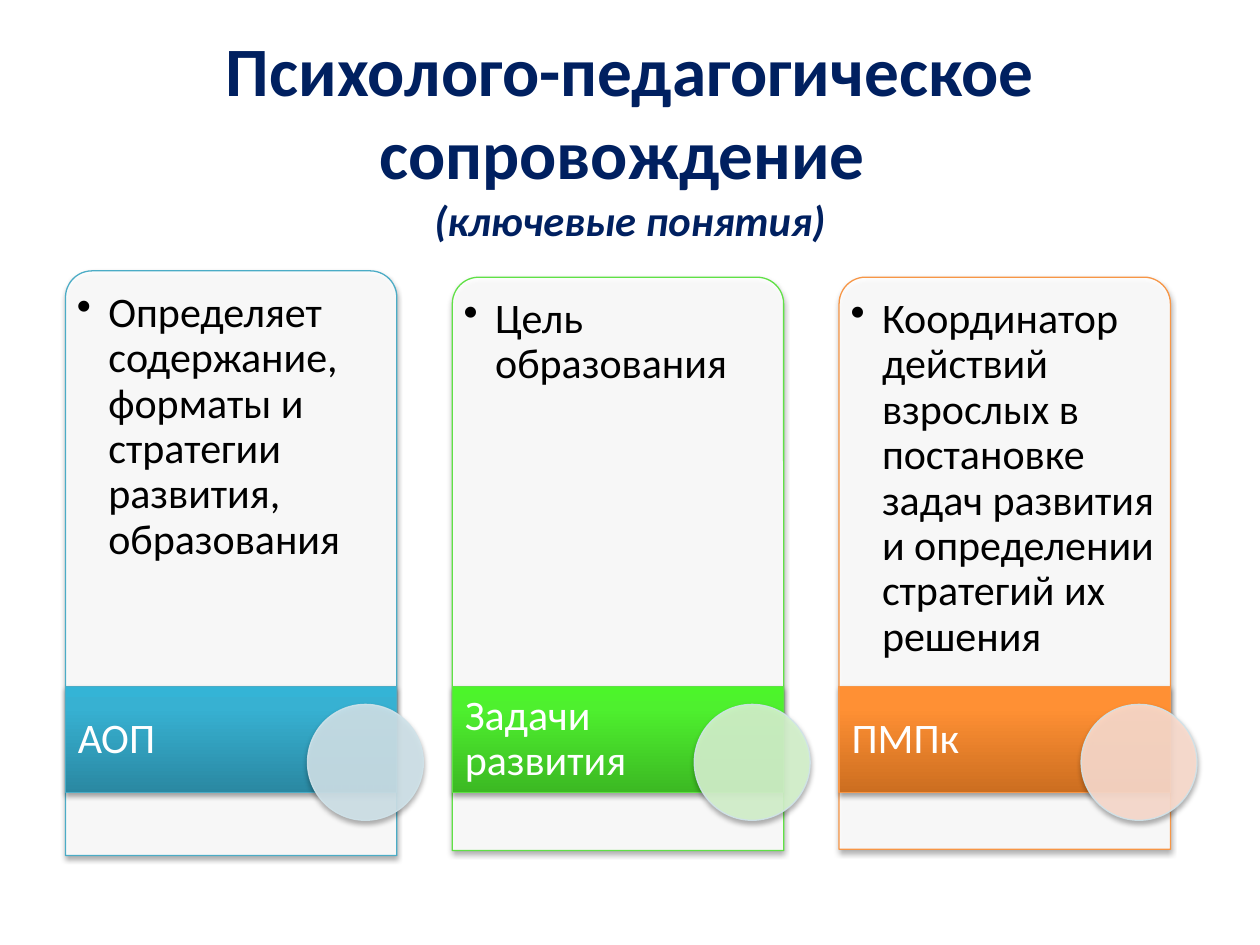
from dataclasses import dataclass
from typing import NamedTuple, Optional

from lxml.etree import SubElement
from pptx import Presentation
from pptx.dml.color import RGBColor
from pptx.enum.shapes import MSO_SHAPE as Preset
from pptx.enum.text import MSO_ANCHOR as Anchor, PP_ALIGN as Align
from pptx.oxml.ns import qn
from pptx.util import Emu, Pt

EMU_PER_PX = 9144  # 100 px to the inch


@dataclass(frozen=True)
class Theme:
    font: str = "Calibri"
    title: str = "002060"
    body: str = "000000"
    label: str = "FFFFFF"
    panel: str = "FFFFFF"
    circle_line: str = "D0E3EA"
    shadow: str = "000000"
    title_size: float = 39.6
    subtitle_size: float = 24.3
    text_size: float = 24
    line_width: float = 0.75


class Box(NamedTuple):
    left: int
    top: int
    width: int
    height: int


class Insets(NamedTuple):
    left: int
    top: int
    right: int
    bottom: int


class Column(NamedTuple):
    label: str
    body: str
    panel_top: int
    panel_height: int
    accent: str
    gradient: tuple[str, str, str]
    circle: str


THEME = Theme()
COLUMN_LEFT, COLUMN_PITCH, COLUMN_WIDTH = 52, 307, 263
BAND_TOP, BAND_HEIGHT, LABEL_WIDTH = 545, 84, 185
CIRCLE_OFFSET, CIRCLE_TOP, CIRCLE_SIZE = 192, 559, 92
BODY_MARGIN = 6
BULLET_INDENT = 25
GRADIENT_STOPS = (0, 80, 100)

COLUMNS = (
    Column("АОП", "Определяет содержание, форматы и стратегии развития, образования",
           215, 464, "4BACC6", ("2A88A2", "37B1D2", "34B4D6"), "D0E3EA"),
    Column("Задачи развития", "Цель образования",
           220, 455, "60E146", ("3CB923", "4EF02E", "4CF52A"), "D6F4CE"),
    Column("ПМПк", "Координатор действий взрослых в постановке задач развития "
           "и определении стратегий их решения",
           220, 454, "F79646", ("CC6E20", "FF9034", "FF9136"), "FCDDCF"),
)


def px(length: int) -> Emu:
    return Emu(length * EMU_PER_PX)


def place(box: Box) -> tuple[Emu, ...]:
    return tuple(px(length) for length in box)


def set_alpha(parent, percent: int) -> None:
    for color in parent.iter(qn("a:srgbClr")):
        SubElement(color, qn("a:alpha"), val=str(percent * 1000))


def add_shadow(shape) -> None:
    shape.shadow.inherit = False
    effects = shape._element.spPr.find(qn("a:effectLst"))
    outer = SubElement(effects, qn("a:outerShdw"), blurRad=str(Pt(3.1)),
                       dist=str(Pt(1.8)), dir="5400000", rotWithShape="0")
    SubElement(outer, qn("a:srgbClr"), val=THEME.shadow)
    set_alpha(outer, 35)


def add_outlined(slide, preset: Preset, box: Box, line: str, fill: Optional[str] = None):
    """Add a shape with a thin line and a shadow; a given fill is 90 % opaque."""
    shape = slide.shapes.add_shape(preset, *place(box))
    shape.line.color.rgb = RGBColor.from_string(line)
    shape.line.width = Pt(THEME.line_width)
    if fill:
        shape.fill.solid()
        shape.fill.fore_color.rgb = RGBColor.from_string(fill)
        set_alpha(shape._element.spPr.find(qn("a:solidFill")), 90)
    add_shadow(shape)
    return shape


def fill_gradient(shape, colors: tuple[str, str, str]) -> None:
    """Fill from the bottom upwards."""
    shape.fill.gradient()
    shape.fill.gradient_angle = 90
    stops = shape._element.spPr.find(f"{qn('a:gradFill')}/{qn('a:gsLst')}")
    for stop in list(stops):
        stops.remove(stop)
    for position, color in zip(GRADIENT_STOPS, colors):
        stop = SubElement(stops, qn("a:gs"), pos=str(position * 1000))
        SubElement(stop, qn("a:srgbClr"), val=color)


def style_run(run, size: float, color: str) -> None:
    run.font.name = THEME.font
    run.font.size = Pt(size)
    run.font.color.rgb = RGBColor.from_string(color)


def add_text(slide, box: Box, text: str, color: str, insets: Insets, anchor: Anchor):
    frame = slide.shapes.add_textbox(*place(box)).text_frame
    frame.word_wrap = True
    frame.vertical_anchor = anchor
    frame.margin_left, frame.margin_top, frame.margin_right, frame.margin_bottom = (
        px(inset) for inset in insets)
    frame.text = text
    paragraph = frame.paragraphs[0]
    paragraph.line_spacing = 0.9
    style_run(paragraph.runs[0], THEME.text_size, color)
    return paragraph


def add_bullet(paragraph) -> None:
    properties = paragraph._p.get_or_add_pPr()
    properties.set("marL", str(px(BULLET_INDENT)))
    properties.set("indent", str(-px(BULLET_INDENT)))
    SubElement(properties, qn("a:buChar"), char="•")


def add_title(slide) -> None:
    frame = slide.shapes.add_textbox(*place(Box(50, 30, 900, 156))).text_frame
    frame.word_wrap = True
    frame.vertical_anchor = Anchor.MIDDLE
    frame.text = "Психолого-педагогическое сопровождение \v(ключевые понятия)"
    paragraph = frame.paragraphs[0]
    paragraph.alignment = Align.CENTER
    heading, subtitle = paragraph.runs
    style_run(heading, THEME.title_size, THEME.title)
    style_run(subtitle, THEME.subtitle_size, THEME.title)
    heading.font.bold = subtitle.font.bold = True
    subtitle.font.italic = True


def add_column(slide, column: Column, left: int) -> None:
    panel_box = Box(left, column.panel_top, COLUMN_WIDTH, column.panel_height)
    panel = add_outlined(slide, Preset.ROUND_2_SAME_RECTANGLE, panel_box,
                         column.accent, THEME.panel)
    panel.adjustments[0] = 0.08
    panel.adjustments[1] = 0

    body_box = Box(left + BODY_MARGIN, column.panel_top + BODY_MARGIN,
                   COLUMN_WIDTH - 2 * BODY_MARGIN, column.panel_height - BODY_MARGIN)
    add_bullet(add_text(slide, body_box, column.body, THEME.body,
                        Insets(3, 10, 3, 3), Anchor.TOP))

    band_box = Box(left, BAND_TOP, COLUMN_WIDTH, BAND_HEIGHT)
    band = add_outlined(slide, Preset.RECTANGLE, band_box, column.accent)
    fill_gradient(band, column.gradient)
    add_text(slide, band_box._replace(width=LABEL_WIDTH), column.label, THEME.label,
             Insets(10, 0, 3, 0), Anchor.MIDDLE)

    circle_box = Box(left + CIRCLE_OFFSET, CIRCLE_TOP, CIRCLE_SIZE, CIRCLE_SIZE)
    circle = add_outlined(slide, Preset.OVAL, circle_box, THEME.circle_line, column.circle)
    set_alpha(circle._element.spPr.find(qn("a:ln")), 90)


def main() -> None:
    presentation = Presentation()
    presentation.slide_width, presentation.slide_height = px(1000), px(750)
    slide = presentation.slides.add_slide(presentation.slide_layouts[6])
    add_title(slide)
    for index, column in enumerate(COLUMNS):
        add_column(slide, column, COLUMN_LEFT + index * COLUMN_PITCH)
    presentation.save("out.pptx")


if __name__ == "__main__":
    main()
